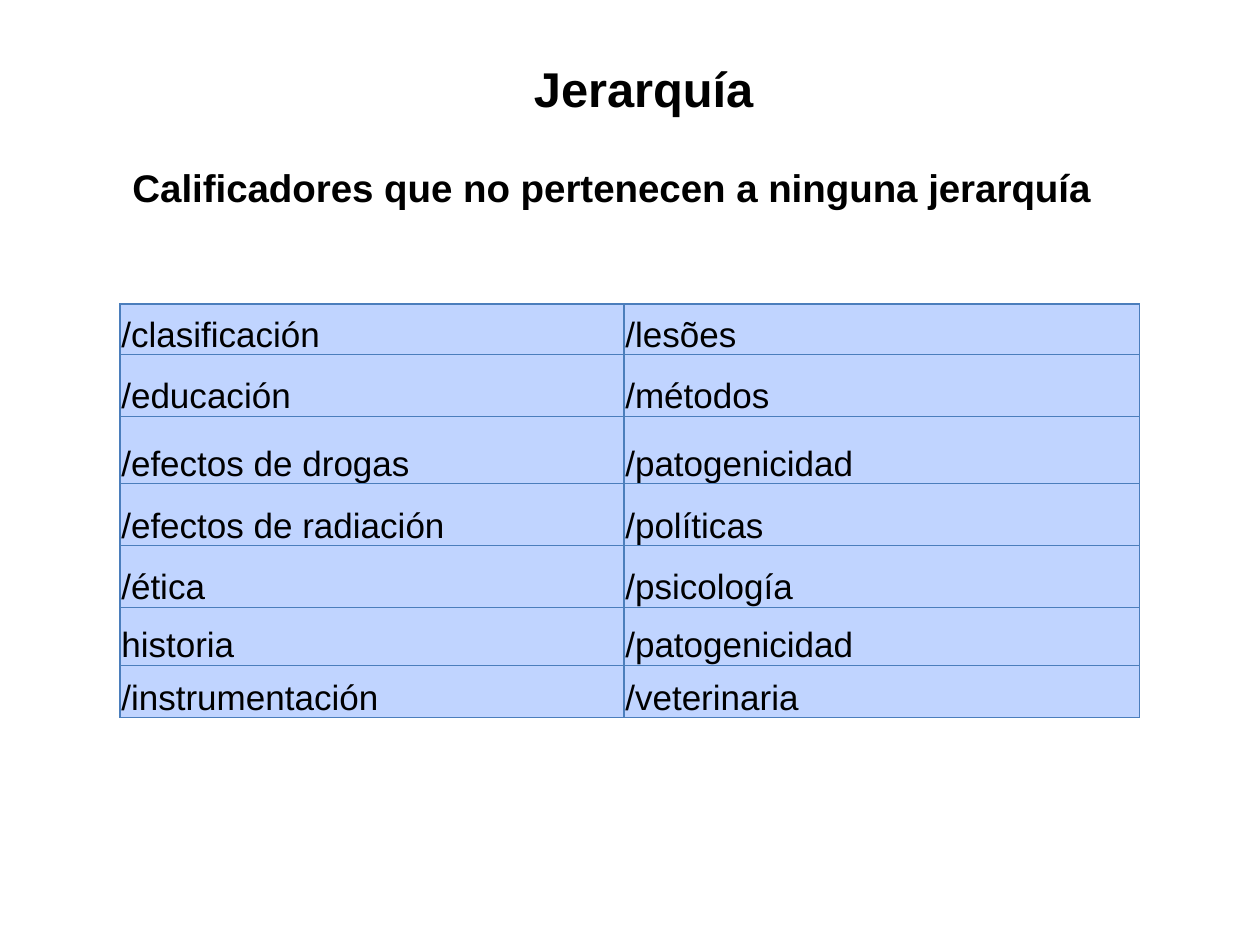
"""Build a slide listing the qualifiers that belong to no hierarchy."""
from lxml import etree
from pptx import Presentation
from pptx.dml.color import RGBColor
from pptx.enum import text
from pptx.oxml import ns
from pptx.util import Pt

ROWS = [
    (28.8, "/clasificación", "/lesões"),
    (35.3, "/educación", "/métodos"),
    (38.6, "/efectos de drogas", "/patogenicidad"),
    (35.3, "/efectos de radiación", "/políticas"),
    (35.3, "/ética", "/psicología"),
    (33.1, "historia", "/patogenicidad"),
    (30.2, "/instrumentación", "/veterinaria"),
]


def color(value):
    return RGBColor.from_string(value)


class SlideBuilder:
    font = "Arial"
    ink = "000000"
    cell_fill = "C0D4FF"
    border = "4B7EBC"

    def __init__(self, presentation):
        self.slide = presentation.slides.add_slide(presentation.slide_layouts[5])

    def set_text(self, text_frame, content, size, bold=False, align=text.PP_ALIGN.LEFT):
        text_frame.text = content
        paragraph = text_frame.paragraphs[0]
        paragraph.alignment = align
        for run in paragraph.runs:
            run.font.name = self.font
            run.font.size = Pt(size)
            run.font.bold = bold
            run.font.color.rgb = color(self.ink)

    def title(self, content, left, top, width, height, size):
        shape = self.slide.shapes.title
        shape.left, shape.top = Pt(left), Pt(top)
        shape.width, shape.height = Pt(width), Pt(height)
        frame = shape.text_frame
        frame.auto_size = text.MSO_AUTO_SIZE.NONE
        frame.vertical_anchor = text.MSO_ANCHOR.BOTTOM
        frame.margin_left = frame.margin_top = frame.margin_bottom = 0
        frame.margin_right = Pt(8)
        self.set_text(frame, content, size, True, text.PP_ALIGN.CENTER)

    def label(self, content, left, top, width, height, size):
        shape = self.slide.shapes.add_textbox(Pt(left), Pt(top), Pt(width), Pt(height))
        shape.text_frame.word_wrap = True
        self.set_text(shape.text_frame, content, size, True)

    def outline(self, cell):
        properties = cell._tc.get_or_add_tcPr()
        for position, side in enumerate(("a:lnL", "a:lnR", "a:lnT", "a:lnB")):
            line = etree.Element(ns.qn(side), w=str(Pt(0.75)))
            fill = etree.SubElement(line, ns.qn("a:solidFill"))
            etree.SubElement(fill, ns.qn("a:srgbClr"), val=self.border)
            properties.insert(position, line)

    def table(self, rows, left, top, widths, size):
        heights = [row[0] for row in rows]
        shape = self.slide.shapes.add_table(
            len(rows), len(widths), Pt(left), Pt(top), Pt(sum(widths)), Pt(sum(heights))
        )
        table = shape.table
        table.first_row = table.horz_banding = False
        for column, width in zip(table.columns, widths):
            column.width = Pt(width)
        for table_row, (height, *contents) in zip(table.rows, rows):
            table_row.height = Pt(height)
            for cell, content in zip(table_row.cells, contents):
                cell.margin_left = cell.margin_right = cell.margin_top = Pt(0.75)
                cell.margin_bottom = 0
                cell.vertical_anchor = text.MSO_ANCHOR.BOTTOM
                cell.fill.solid()
                cell.fill.fore_color.rgb = color(self.cell_fill)
                self.outline(cell)
                self.set_text(cell.text_frame, content, size)


def main():
    presentation = Presentation()
    presentation.slide_width, presentation.slide_height = Pt(720), Pt(540)
    builder = SlideBuilder(presentation)
    builder.title("Jerarquía", 78, 26, 587.5, 41, 27.9)
    builder.table(ROWS, 68.6, 173.7, (288, 294.5), 20)
    builder.label(
        "Calificadores que no pertenecen a ninguna jerarquía", 68.6, 90, 582.5, 34, 22
    )
    presentation.save("out.pptx")


if __name__ == "__main__":
    main()
